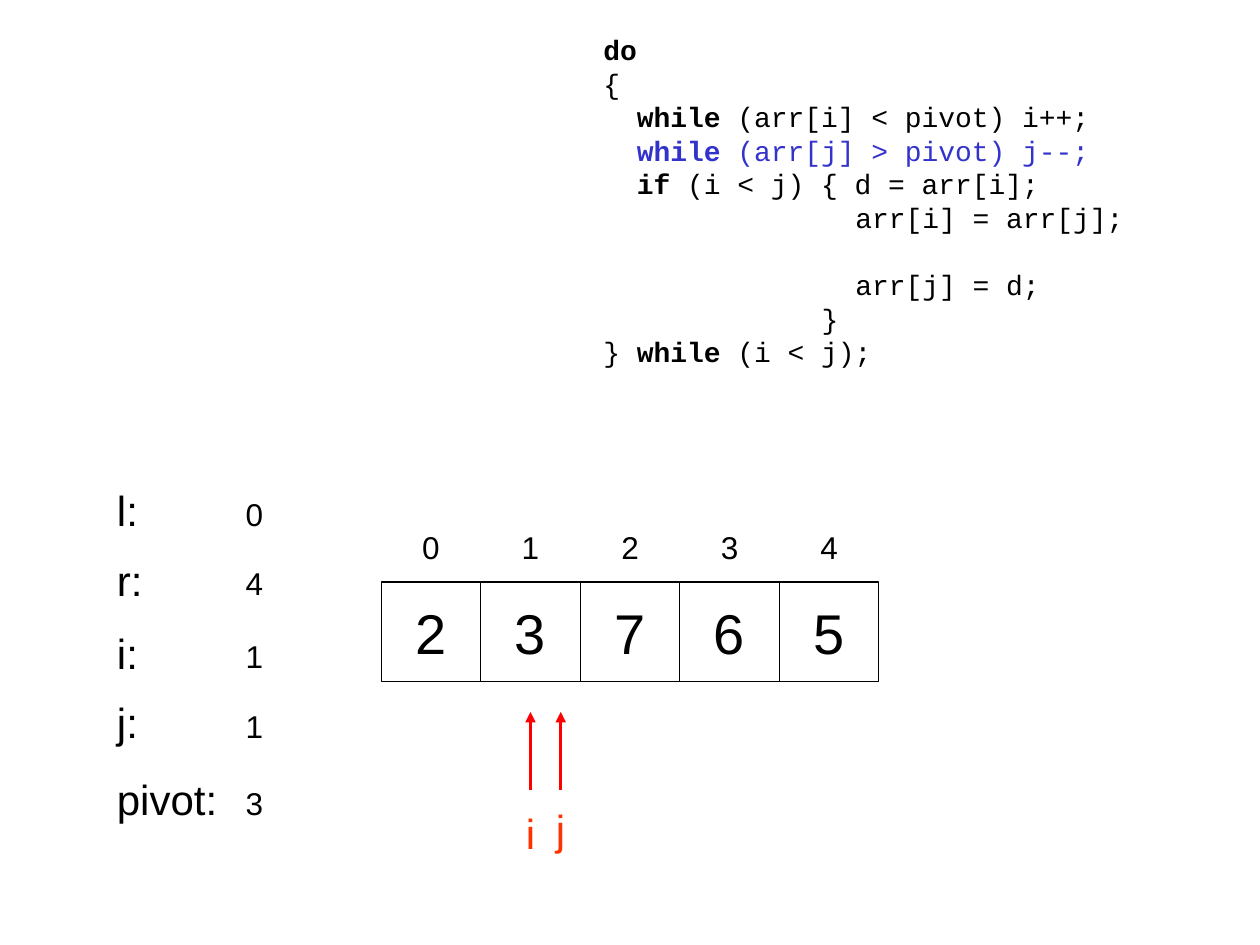
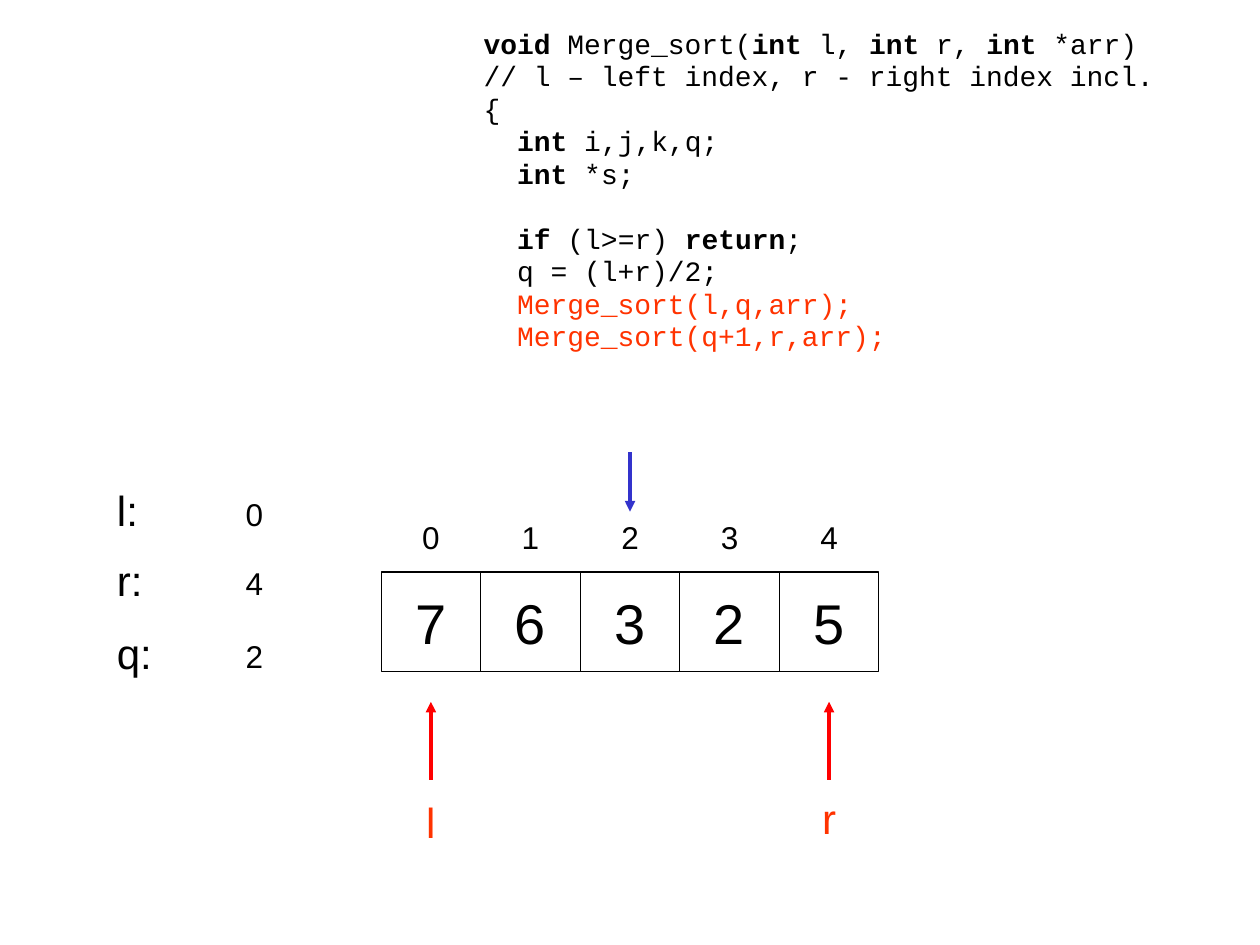
from dataclasses import dataclass

from pptx import Presentation
from pptx.dml.color import RGBColor
from pptx.enum.shapes import MSO_CONNECTOR, MSO_SHAPE
from pptx.enum.text import MSO_ANCHOR, MSO_AUTO_SIZE, PP_ALIGN
from pptx.oxml.ns import qn
from pptx.oxml.xmlchemy import OxmlElement
from pptx.util import Inches, Pt

RECTANGLE = MSO_SHAPE.RECTANGLE
STRAIGHT = MSO_CONNECTOR.STRAIGHT
MIDDLE = MSO_ANCHOR.MIDDLE
GROW = MSO_AUTO_SIZE.SHAPE_TO_FIT_TEXT
LEFT, CENTER = PP_ALIGN.LEFT, PP_ALIGN.CENTER
TOP_SIDE = 0


@dataclass(frozen=True)
class Theme:
    black: RGBColor = RGBColor.from_string("000000")
    blue: RGBColor = RGBColor.from_string("3333CC")
    red: RGBColor = RGBColor.from_string("FF0000")
    orange: RGBColor = RGBColor.from_string("FF3300")
    body_font: str = "Arial"
    code_font: str = "Courier New"
    cell_size: int = 32
    name_size: int = 24
    value_size: int = 18
    code_size: int = 16
    cell_line: float = 0.75
    arrow_line: float = 2


THEME = Theme()

# Code lines: (indent in characters, text with `bold` marks, colour, blank lines above)
PARTITION_CODE = [
    (0, "`do`", THEME.black, 0),
    (0, "{", THEME.black, 0),
    (2, "`while` (arr[i] < pivot) i++;", THEME.black, 0),
    (2, "`while` (arr[j] > pivot) j--;", THEME.blue, 0),
    (2, "`if` (i < j) { d = arr[i];", THEME.black, 0),
    (15, "arr[i] = arr[j];", THEME.black, 0),
    (15, "arr[j] = d;", THEME.black, 1),
    (13, "}", THEME.black, 0),
    (0, "} `while` (i < j);", THEME.black, 0),
]
MERGE_SORT_CODE = [
    (0, "`void` Merge_sort(`int` l, `int` r, `int` *arr)", THEME.black, 0),
    (0, "// l – left index, r - right index incl.", THEME.black, 0),
    (0, "{", THEME.black, 0),
    (2, "`int` i,j,k,q;", THEME.black, 0),
    (2, "`int` *s;", THEME.black, 0),
    (2, "`if` (l>=r) `return`;", THEME.black, 1),
    (2, "q = (l+r)/2;", THEME.black, 0),
    (2, "Merge_sort(l,q,arr);", THEME.orange, 0),
    (2, "Merge_sort(q+1,r,arr);", THEME.orange, 0),
]

# Pointers: (label, cell index, shift to the right, label distance below the cell top)
STEPS = [
    {
        "array": [2, 3, 7, 6, 5],
        "array_top": 4.62,
        "variables": [("l:", 0), ("r:", 4), ("i:", 1), ("j:", 1), ("pivot:", 3)],
        "pointers": [("i", 1, 0, 1.74), ("j", 1, 0.24, 1.71)],
        "middle": None,
        "code": PARTITION_CODE,
        "code_box": (4.69, 0.21, 5, 2.51),
        "line_spacing": 1.0,
        "space_before": 0,
        "line_pitch": 19.2,
    },
    {
        "array": [7, 6, 3, 2, 5],
        "array_top": 4.54,
        "variables": [("l:", 0), ("r:", 4), ("q:", 2)],
        "pointers": [("l", 0, 0, 1.73), ("r", 4, 0, 1.7)],
        "middle": 2,
        "code": MERGE_SORT_CODE,
        "code_box": (3.74, 0.21, 5.95, 2.75),
        "line_spacing": 0.8,
        "space_before": 3.2,
        "line_pitch": 18.56,
    },
]

SLIDE_WIDTH, SLIDE_HEIGHT = 10, 7.5
CELL = 0.79
INDEX_RISE = 0.48
VARIABLE_TOPS = [3.8, 4.35, 4.93, 5.48, 6.09]
NAME_LEFT, VALUE_LEFT, VALUE_DROP = 0.83, 1.85, 0.08
POINTER_START, POINTER_END, POINTER_WIDTH = 1.65, 1.03, 0.47


def format_run(run, size, color, font, bold=False):
    run.font.size = Pt(size)
    run.font.name = font
    run.font.color.rgb = color
    run.font.bold = bold


def write(shape, text, size, color=THEME.black, align=LEFT):
    shape.text_frame.text = str(text)
    paragraph = shape.text_frame.paragraphs[0]
    paragraph.alignment = align
    format_run(paragraph.runs[0], size, color, THEME.body_font)


def add_text_box(slide, left, top, width, height):
    box = slide.shapes.add_textbox(*map(Inches, (left, top, width, height)))
    box.text_frame.word_wrap = True
    box.text_frame.auto_size = GROW
    return box


def add_label(slide, box, *style, **options):
    label = add_text_box(slide, *box)
    write(label, *style, **options)
    return label


def add_arrow(slide, x, start, end, color):
    arrow = slide.shapes.add_connector(
        STRAIGHT, Inches(x), Inches(start), Inches(x), Inches(end)
    )
    arrow.line.color.rgb = color
    arrow.line.width = Pt(THEME.arrow_line)
    properties = arrow.element.spPr
    head = OxmlElement("a:tailEnd")
    head.set("type", "triangle")
    properties.find(qn("a:ln")).append(head)
    properties.append(OxmlElement("a:effectLst"))
    return arrow


def add_array(slide, values, top):
    first_left = (SLIDE_WIDTH - CELL * len(values)) / 2
    lefts = [first_left + CELL * index for index in range(len(values))]
    for left, value in zip(lefts, values):
        cell = slide.shapes.add_shape(
            RECTANGLE, *map(Inches, (left, top, CELL, CELL))
        )
        cell.shadow.inherit = False
        cell.fill.background()
        cell.line.color.rgb = THEME.black
        cell.line.width = Pt(THEME.cell_line)
        cell.text_frame.word_wrap = False
        cell.text_frame.vertical_anchor = MIDDLE
        write(cell, value, THEME.cell_size, align=CENTER)
    index_labels = [
        add_label(slide, (left, top - INDEX_RISE, CELL, 0.39),
                  index, THEME.value_size, align=CENTER)
        for index, left in enumerate(lefts)
    ]
    return [left + CELL / 2 for left in lefts], index_labels


def add_pointers(slide, pointers, centers, top):
    for name, index, shift, drop in pointers:
        x = centers[index] + shift
        add_arrow(slide, x, top + POINTER_START, top + POINTER_END, THEME.red)
        add_label(slide, (x - POINTER_WIDTH / 2, top + drop, POINTER_WIDTH, 0.5),
                  name, THEME.name_size, THEME.orange, align=CENTER)


def add_variables(slide, variables):
    for top, (name, value) in zip(VARIABLE_TOPS, variables):
        add_label(slide, (NAME_LEFT, top, 1.1, 0.5), name, THEME.name_size)
        add_label(slide, (VALUE_LEFT, top + VALUE_DROP, 0.39, 0.4),
                  value, THEME.value_size)


def add_code(slide, step):
    frame = add_text_box(slide, *step["code_box"]).text_frame
    character_width = 0.6 * THEME.code_size
    for number, (indent, text, color, blank_lines) in enumerate(step["code"]):
        paragraph = frame.add_paragraph() if number else frame.paragraphs[0]
        paragraph.alignment = LEFT
        paragraph.line_spacing = step["line_spacing"]
        paragraph.space_before = Pt(
            step["space_before"] + blank_lines * step["line_pitch"]
        )
        properties = paragraph._p.get_or_add_pPr()
        properties.set("marL", str(Pt(indent * character_width)))
        properties.set("indent", "0")
        for position, part in enumerate(text.split("`")):
            if part:
                run = paragraph.add_run()
                run.text = part
                format_run(run, THEME.code_size, color, THEME.code_font,
                           bold=position % 2 == 1)


def add_step(presentation, step):
    slide = presentation.slides.add_slide(presentation.slide_layouts[6])
    top = step["array_top"]
    centers, index_labels = add_array(slide, step["array"], top)
    middle = step["middle"]
    if middle is not None:
        arrow = add_arrow(slide, centers[middle], top - 0.95,
                          top - INDEX_RISE, THEME.blue)
        arrow.end_connect(index_labels[middle], TOP_SIDE)
    add_pointers(slide, step["pointers"], centers, top)
    add_variables(slide, step["variables"])
    add_code(slide, step)


def main():
    presentation = Presentation()
    presentation.slide_width = Inches(SLIDE_WIDTH)
    presentation.slide_height = Inches(SLIDE_HEIGHT)
    for step in STEPS:
        add_step(presentation, step)
    presentation.save("out.pptx")


if __name__ == "__main__":
    main()
